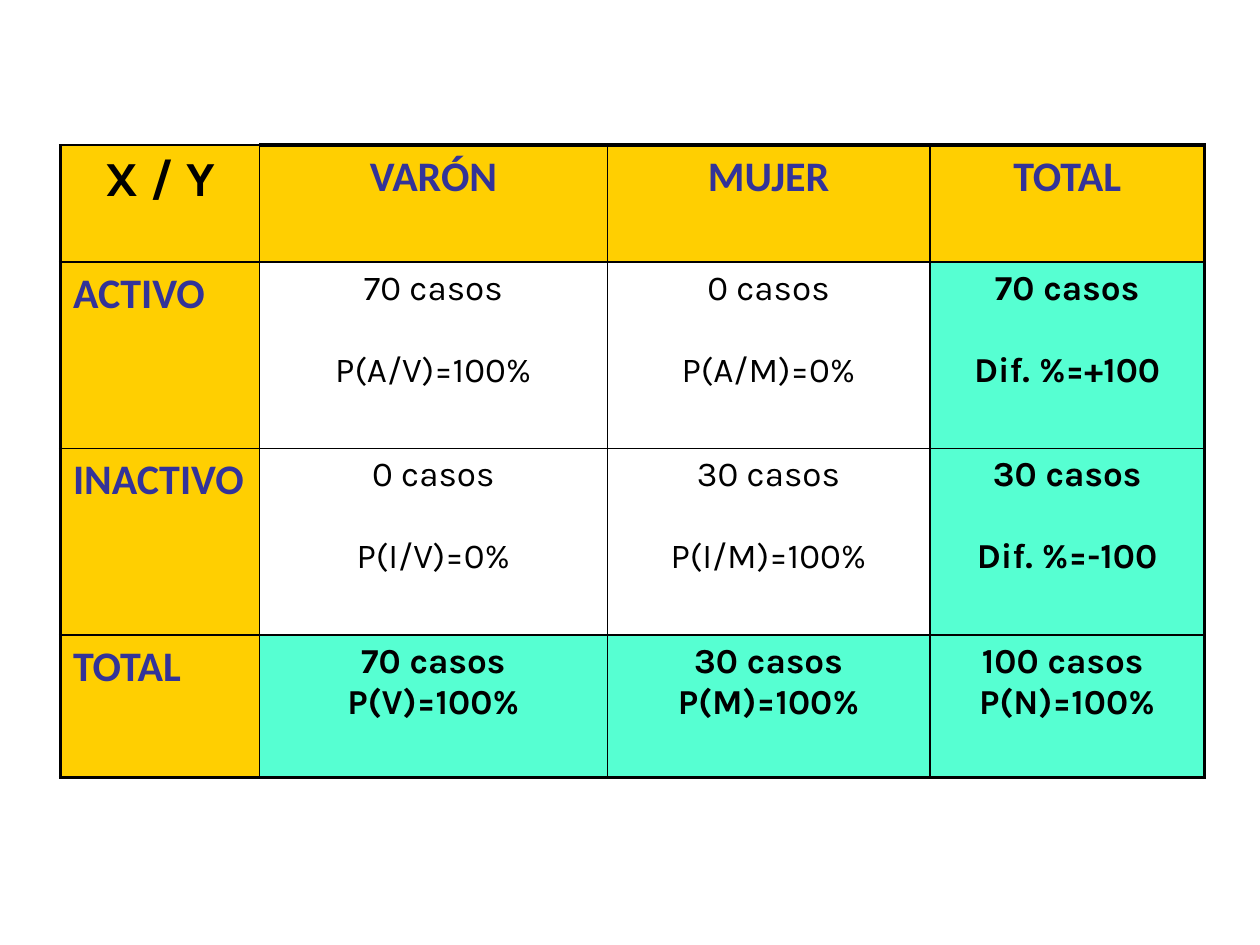
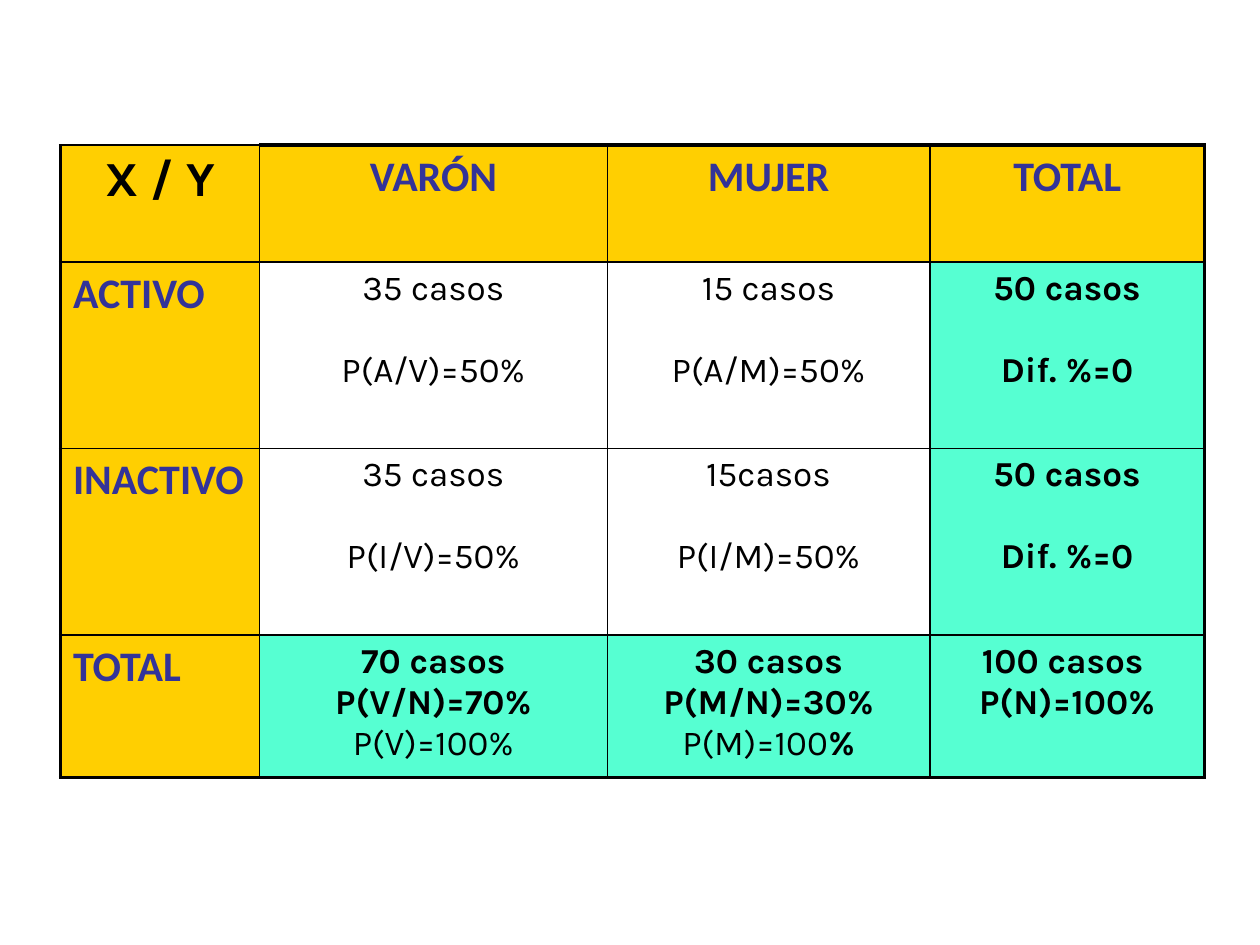
"""Build two slides that cross activity with sex in a table of cases and shares."""
import pptx
import pptx.dml.color
import pptx.enum.text
import pptx.oxml
import pptx.oxml.ns
import pptx.util

Inches = pptx.util.Inches
Pt = pptx.util.Pt
ALIGN = pptx.enum.text.PP_ALIGN

COLORS = {"gold": "FFCF01", "mint": "56FFD2", "navy": "333399", "black": "000000"}
WIDTHS = [1.58, 2.76, 2.56, 2.18]
HEIGHTS = [0.93, 1.48, 1.48, 1.13]
LAST = len(WIDTHS) - 1
THIN, THICK = 1, 2.25
GAP = 23.4
HEADS = ["VARÓN", "MUJER", "TOTAL"]
SIDES = ["ACTIVO", "INACTIVO", "TOTAL"]


def color(name):
    return pptx.dml.color.RGBColor.from_string(COLORS[name])


def plain(text):
    return [(text, False)]


def strong(text):
    return [(text, True)]


def draw_edge(cell, side, width):
    edge = pptx.oxml.parse_xml(
        f'<a:ln{side} {pptx.oxml.ns.nsdecls("a")} w="{Pt(width)}">'
        f'<a:solidFill><a:srgbClr val="{COLORS["black"]}"/></a:solidFill></a:ln{side}>'
    )
    cell._tc.get_or_add_tcPr().append(edge)


def style_cell(cell, row, col):
    outer = {"L": col == 0, "R": col == LAST, "T": row == 0 and col > 0, "B": row == LAST}
    for side, thick in outer.items():
        draw_edge(cell, side, THICK if thick else THIN)
    if row == 0 or col == 0:
        fill = "gold"
    elif LAST in (row, col):
        fill = "mint"
    else:
        cell.fill.background()
        return
    cell.fill.solid()
    cell.fill.fore_color.rgb = color(fill)


def write_cell(cell, lines, size=20, face="Karla", ink="black", align=ALIGN.CENTER, gap=0):
    frame = cell.text_frame
    for index, line in enumerate(lines):
        para = frame.add_paragraph() if index else frame.paragraphs[0]
        para.alignment = align
        para.space_before = Pt(gap if index else 0)
        for text, bold in line:
            run = para.add_run()
            run.text = text
            run.font.size = Pt(size)
            run.font.name = face
            run.font.bold = bold
            run.font.color.rgb = color(ink)


def write_label(cell, text, align):
    write_cell(cell, [strong(text)], 24, "Calibri", "navy", align)


def add_table(slide, body):
    frame = slide.shapes.add_table(
        len(HEIGHTS), len(WIDTHS), Inches(0.48), Inches(1.15),
        Inches(sum(WIDTHS)), Inches(sum(HEIGHTS)),
    )
    table = frame.table
    table.first_row = table.horz_banding = False
    for col, width in enumerate(WIDTHS):
        table.columns[col].width = Inches(width)
    for row, height in enumerate(HEIGHTS):
        table.rows[row].height = Inches(height)
        for col in range(len(WIDTHS)):
            style_cell(table.cell(row, col), row, col)
    write_cell(table.cell(0, 0), [strong("X / Y")], size=28)
    for index, (head, side) in enumerate(zip(HEADS, SIDES), 1):
        write_label(table.cell(0, index), head, ALIGN.CENTER)
        write_label(table.cell(index, 0), side, ALIGN.LEFT)
    for row, cells in enumerate(body, 1):
        for col, lines in enumerate(cells, 1):
            write_cell(table.cell(row, col), lines, gap=0 if row == LAST else GAP)


def main():
    total = [strong("100 casos "), strong("P(N)=100%")]
    full = [
        [[plain("70 casos"), plain("P(A/V)=100%")],
         [plain("0 casos"), plain("P(A/M)=0%")],
         [strong("70 casos"), strong("Dif. %=+100")]],
        [[plain("0 casos"), plain("P(I/V)=0%")],
         [plain("30 casos"), plain("P(I/M)=100%")],
         [strong("30 casos"), strong("Dif. %=-100")]],
        [[strong("70 casos"), strong("P(V)=100%")],
         [strong("30 casos"), strong("P(M)=100%")],
         total],
    ]
    even = [strong("50 casos"), strong("Dif. %=0")]
    null = [
        [[plain("35 casos"), plain("P(A/V)=50%")],
         [plain("15 casos"), plain("P(A/M)=50%")],
         even],
        [[plain("35 casos"), plain("P(I/V)=50%")],
         [plain("15casos"), plain("P(I/M)=50%")],
         even],
        [[strong("70 casos"), strong("P(V/N)=70%"), plain("P(V)=100%")],
         [strong("30 casos"), strong("P(M/N)=30%"), plain("P(M)=100") + strong("%")],
         total],
    ]
    deck = pptx.Presentation()
    deck.slide_width, deck.slide_height = Inches(10), Inches(7.5)
    for body in (full, null):
        add_table(deck.slides.add_slide(deck.slide_layouts[6]), body)
    deck.save("out.pptx")


if __name__ == "__main__":
    main()
